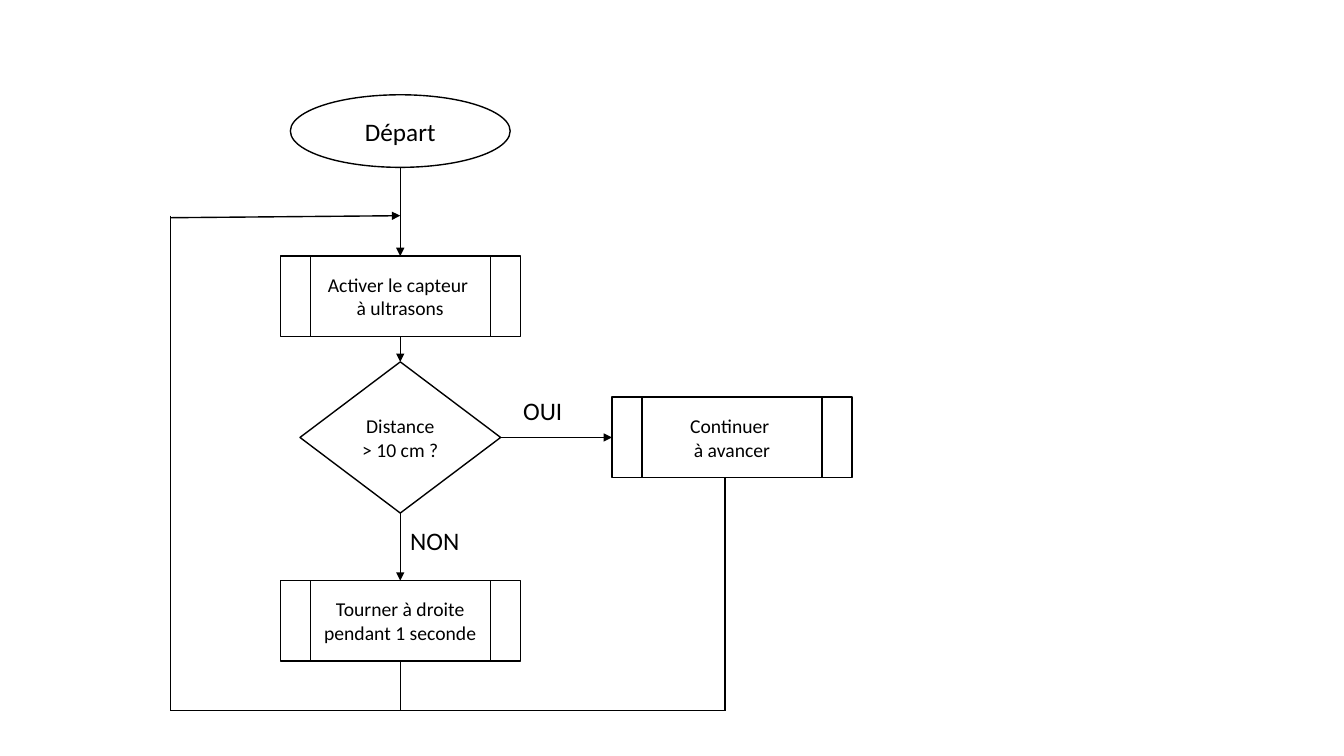
from dataclasses import dataclass

from lxml import etree
from pptx import Presentation
from pptx.dml.color import RGBColor
from pptx.enum.shapes import MSO_CONNECTOR, MSO_SHAPE
from pptx.enum.text import MSO_ANCHOR, PP_ALIGN
from pptx.oxml.ns import qn
from pptx.shapes.autoshape import Shape
from pptx.slide import Slide
from pptx.text.text import TextFrame
from pptx.util import Inches, Pt

OVAL = MSO_SHAPE.OVAL
TASK = MSO_SHAPE.FLOWCHART_PREDEFINED_PROCESS
TEST = MSO_SHAPE.FLOWCHART_DECISION
STRAIGHT = MSO_CONNECTOR.STRAIGHT
MIDDLE = MSO_ANCHOR.MIDDLE
LEFT, CENTER = PP_ALIGN.LEFT, PP_ALIGN.CENTER
TOP, WEST, BOTTOM, EAST = range(4)

COLORS = {"ink": "000000", "paper": "FFFFFF"}
FONT = "Calibri"
AXIS, LOOP, BACK, BASE = 3.97, 1.69, 7.19, 7.05
TASK_W, TASK_H = 2.38, 0.8


@dataclass
class Node:
    name: str
    kind: MSO_SHAPE
    mid: float
    top: float
    width: float
    height: float
    text: str
    size: int = 14


@dataclass
class Link:
    start: tuple[float, float]
    end: tuple[float, float]
    arrow: bool = False
    source: tuple[str, int] | None = None
    target: tuple[str, int] | None = None


@dataclass
class Label:
    left: float
    top: float
    text: str


NODES = [
    Node("start", OVAL, AXIS, 0.94, 2.18, 0.72, "Départ", 18),
    Node("sensor", TASK, AXIS, 2.54, TASK_W, TASK_H, "Activer le capteur \và ultrasons"),
    Node("test", TEST, AXIS, 3.59, 1.99, 1.5, "Distance > 10 cm ?"),
    Node("forward", TASK, 7.26, 3.94, TASK_W, TASK_H, "Continuer \và avancer"),
    Node("turn", TASK, AXIS, 5.76, TASK_W, TASK_H, "Tourner à droite pendant 1 seconde"),
]
LINKS = [
    Link((AXIS, 1.66), (AXIS, 2.54), True, None, ("sensor", TOP)),
    Link((AXIS, 3.34), (AXIS, 3.59), True, ("sensor", BOTTOM), ("test", TOP)),
    Link((AXIS, 5.09), (AXIS, 5.76), True, ("test", BOTTOM), ("turn", TOP)),
    Link((4.96, 4.34), (6.07, 4.34), True, ("test", EAST), ("forward", WEST)),
    Link((LOOP, 2.16), (AXIS, 2.14), True),
    Link((LOOP, 2.14), (LOOP, BASE)),
    Link((BACK, 4.74), (BACK, BASE)),
    Link((AXIS, 6.56), (AXIS, BASE), False, ("turn", BOTTOM)),
    Link((LOOP, BASE), (BACK, BASE)),
]
LABELS = [Label(5.09, 3.87, "OUI"), Label(AXIS, 5.16, "NON")]


def color(name: str) -> RGBColor:
    return RGBColor.from_string(COLORS[name])


def write(frame: TextFrame, text: str, size: int, align: PP_ALIGN) -> None:
    frame.word_wrap = True
    frame.text = text
    for para in frame.paragraphs:
        para.alignment = align
        for run in para.runs:
            run.font.name = FONT
            run.font.size = Pt(size)
            run.font.color.rgb = color("ink")


def draw_node(slide: Slide, node: Node) -> Shape:
    shape = slide.shapes.add_shape(
        node.kind, Inches(node.mid - node.width / 2), Inches(node.top),
        Inches(node.width), Inches(node.height))
    shape.shadow.inherit = False
    shape.fill.solid()
    shape.fill.fore_color.rgb = color("paper")
    shape.line.color.rgb = color("ink")
    shape.line.width = Pt(1)
    shape.text_frame.vertical_anchor = MIDDLE
    write(shape.text_frame, node.text, node.size, CENTER)
    return shape


def draw_link(slide: Slide, link: Link, nodes: dict[str, Shape]) -> None:
    points = [Inches(value) for value in link.start + link.end]
    line = slide.shapes.add_connector(STRAIGHT, *points)
    if link.source:
        name, site = link.source
        line.begin_connect(nodes[name], site)
    if link.target:
        name, site = link.target
        line.end_connect(nodes[name], site)
    line.line.color.rgb = color("ink")
    line.line.width = Pt(1)
    props = line.element.spPr
    if link.arrow:
        etree.SubElement(props.find(qn("a:ln")), qn("a:tailEnd"), type="triangle")
    etree.SubElement(props, qn("a:effectLst"))


def draw_label(slide: Slide, label: Label) -> None:
    box = slide.shapes.add_textbox(
        Inches(label.left), Inches(label.top), Inches(0.86), Inches(0.4))
    write(box.text_frame, label.text, 18, LEFT)


def main() -> None:
    deck = Presentation()
    deck.slide_width = Inches(13.33)
    deck.slide_height = Inches(7.5)
    slide = deck.slides.add_slide(deck.slide_layouts[6])
    nodes = {node.name: draw_node(slide, node) for node in NODES}
    for link in LINKS:
        draw_link(slide, link, nodes)
    for label in LABELS:
        draw_label(slide, label)
    deck.save("out.pptx")


if __name__ == "__main__":
    main()
